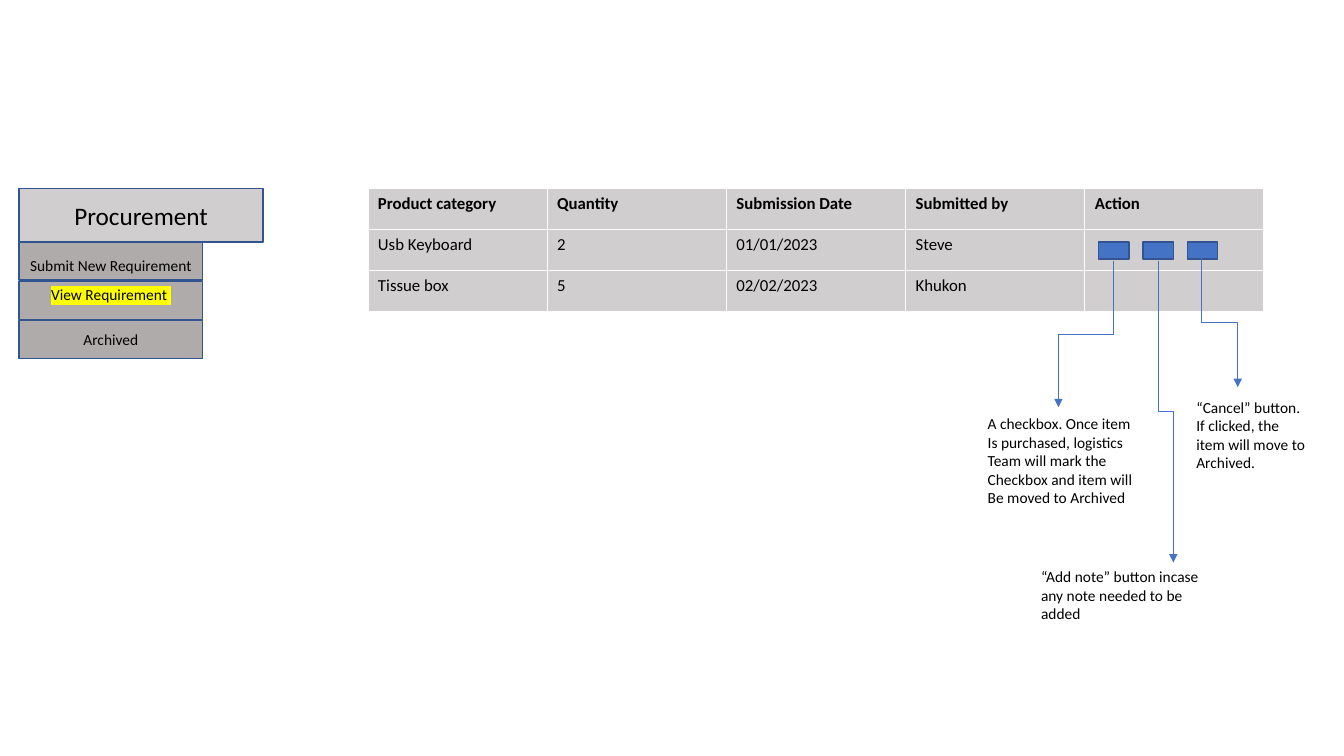
from dataclasses import dataclass

from lxml import etree
from pptx import Presentation
from pptx.dml.color import RGBColor as RGB
from pptx.enum.shapes import MSO_CONNECTOR as CONN, MSO_SHAPE as SHAPE
from pptx.enum.text import MSO_ANCHOR as ANCHOR, MSO_AUTO_SIZE as AUTO, PP_ALIGN as ALIGN
from pptx.oxml.ns import qn
from pptx.util import Emu, Pt


@dataclass(frozen=True)
class Theme:
    font: str = "Calibri"
    text: str = "000000"
    panel: str = "D0CECE"
    item: str = "AFABAB"
    accent: str = "4472C4"
    outline: str = "325491"
    highlight: str = "FFFF00"
    title_size: int = 18
    table_size: int = 12
    small_size: int = 11


THEME = Theme()
EMU_PER_PX = 9144
INSET = 5

MENU_ITEMS = [
    ("Submit New Requirement", INSET + 8, INSET, False),
    ("View Requirement ", INSET, INSET + 12, True),
    ("Archived", INSET, INSET, False),
]

ROWS = [
    ["Product category", "Quantity", "Submission Date", "Submitted by", "Action"],
    ["Usb Keyboard", "2", "01/01/2023", "Steve", ""],
    ["Tissue box", "5", "02/02/2023", "Khukon", ""],
]

CALLOUTS = [
    ((1105, 259), (1050, 404), (970, 406, 165, 103), False,
     ["A checkbox. Once item", "Is purchased, logistics", "Team will mark the",
      "Checkbox and item will", "Be moved to Archived"]),
    ((1149, 259), (1164, 558), (1023, 558, 184, 66), True,
     ["“Add note” button incase any note needed to be added"]),
    ((1192, 256), (1228, 384), (1177, 390, 132, 84), True,
     ["“Cancel” button.", "If clicked, the item will move to Archived."]),
]


def px(n):
    return Emu(int(n * EMU_PER_PX))


def style_text(tf, size, bold=False, align=None):
    for p in tf.paragraphs:
        p.alignment = align
        for r in p.runs:
            r.font.name = THEME.font
            r.font.size = Pt(size)
            r.font.bold = bold
            r.font.color.rgb = RGB.from_string(THEME.text)


def highlight(r, color):
    fill = r.font._element.find(qn("a:solidFill"))
    mark = etree.Element(qn("a:highlight"))
    etree.SubElement(mark, qn("a:srgbClr"), val=color)
    fill.addnext(mark)


def add_box(shapes, box, fill):
    sp = shapes.add_shape(SHAPE.RECTANGLE, *map(px, box))
    sp.shadow.inherit = False
    sp.fill.solid()
    sp.fill.fore_color.rgb = RGB.from_string(fill)
    sp.line.color.rgb = RGB.from_string(THEME.outline)
    sp.line.width = Pt(1)
    return sp


def add_label(shapes, box, fill, text, size):
    sp = add_box(shapes, box, fill)
    tf = sp.text_frame
    tf.text = text
    tf.word_wrap = True
    tf.vertical_anchor = ANCHOR.MIDDLE
    style_text(tf, size, align=ALIGN.CENTER)
    return tf


def add_menu(slide, box):
    x, y, w, h = box
    title_h, item_w, item_h = 53, 182, 38
    pitch = (h - title_h) // len(MENU_ITEMS)
    shapes = slide.shapes.add_group_shape().shapes
    add_label(shapes, (x, y, w, title_h), THEME.panel, "Procurement", THEME.title_size)
    for i, (text, top, bottom, marked) in enumerate(MENU_ITEMS):
        item = (x, y + title_h + i * pitch, item_w, item_h)
        tf = add_label(shapes, item, THEME.item, text, THEME.small_size)
        tf.margin_top, tf.margin_bottom = px(top), px(bottom)
        if marked:
            highlight(tf.paragraphs[0].runs[0], THEME.highlight)


def add_requirements(slide, box):
    table = slide.shapes.add_table(len(ROWS), len(ROWS[0]), *map(px, box)).table
    for i, row in enumerate(ROWS):
        for j, text in enumerate(row):
            cell = table.cell(i, j)
            cell.fill.solid()
            cell.fill.fore_color.rgb = RGB.from_string(THEME.panel)
            if text:
                cell.text_frame.text = text
                style_text(cell.text_frame, THEME.table_size, bold=i == 0)


def add_buttons(slide, box):
    x, y, w, h = box
    button_w = 30
    pitch = (w - button_w) // 2
    for i in range(3):
        add_box(slide.shapes, (x + i * pitch, y, button_w, h), THEME.accent)


def add_elbow(slide, start, end):
    (x1, y1), (x2, y2) = start, end
    length, rise = y2 - y1, abs(x2 - x1)
    left = (x1 + x2 - length) / 2
    top = (y1 + y2 - rise) / 2
    cx = slide.shapes.add_connector(
        CONN.ELBOW, px(left), px(top), px(left + length), px(top + rise))
    cx.line.color.rgb = RGB.from_string(THEME.accent)
    cx.line.width = Pt(0.5)
    sp_pr = cx._element.spPr
    xfrm = sp_pr.find(qn("a:xfrm"))
    if x2 < x1:
        xfrm.set("rot", "5400000")
    else:
        xfrm.set("rot", "16200000")
        xfrm.set("flipH", "1")
    etree.SubElement(sp_pr.find(qn("a:ln")), qn("a:tailEnd"), type="triangle")
    etree.SubElement(sp_pr, qn("a:effectLst"))


def add_callout(slide, start, end, box, wrap, lines):
    add_elbow(slide, start, end)
    tf = slide.shapes.add_textbox(*map(px, box)).text_frame
    tf.text = "\n".join(lines)
    tf.word_wrap = wrap
    tf.auto_size = AUTO.SHAPE_TO_FIT_TEXT
    style_text(tf, THEME.small_size)


def main():
    prs = Presentation()
    prs.slide_width, prs.slide_height = Emu(12192000), px(750)
    slide = prs.slides.add_slide(prs.slide_layouts[6])
    add_menu(slide, (19, 187, 242, 170))
    add_requirements(slide, (365, 187, 889, 122))
    add_buttons(slide, (1090, 240, 118, 17))
    for callout in CALLOUTS:
        add_callout(slide, *callout)
    prs.save("out.pptx")


if __name__ == "__main__":
    main()
